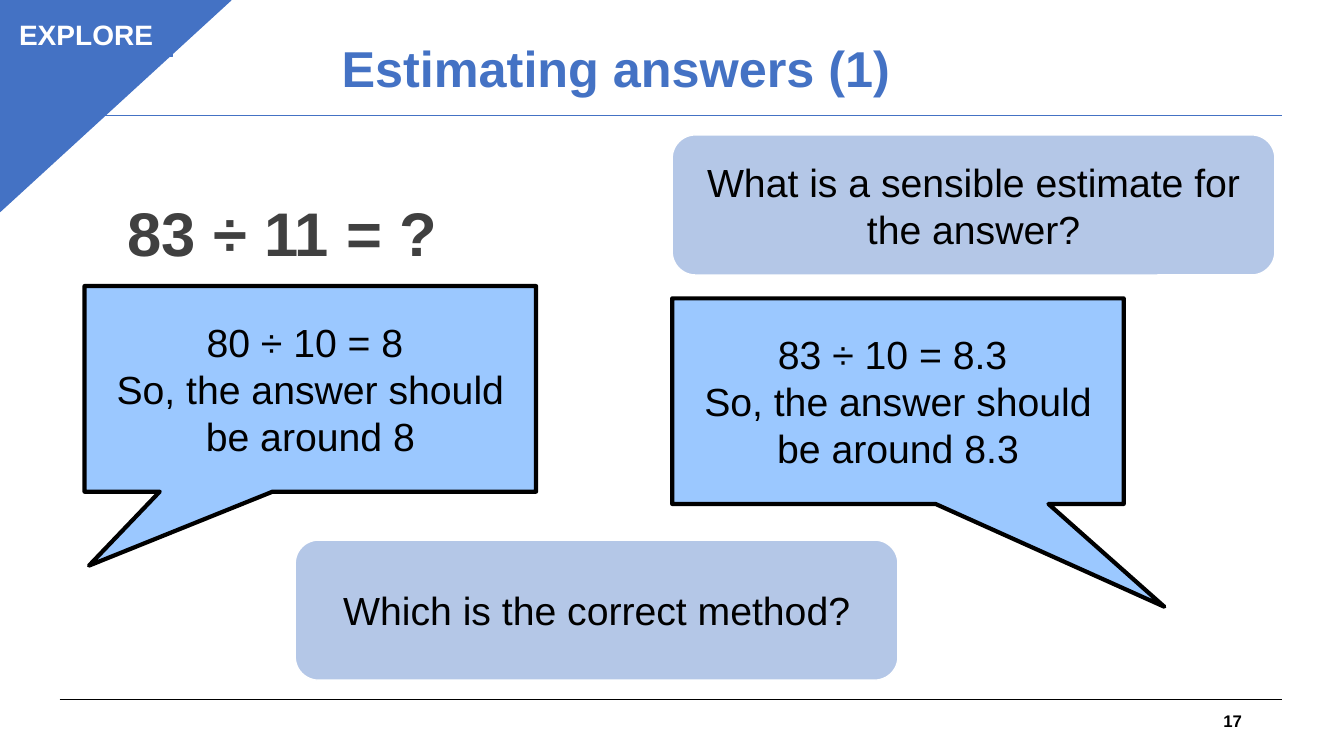
"""Build the slide on estimating the answer to a division."""
from lxml.etree import SubElement
from pptx import Presentation
from pptx.dml.color import RGBColor
from pptx.enum.shapes import MSO_CONNECTOR, MSO_SHAPE
from pptx.enum.text import MSO_ANCHOR, PP_ALIGN
from pptx.oxml.ns import qn
from pptx.util import Cm, Pt

TITLE = "Estimating answers (1)"
SUM = "83 ÷ 11 = ?"
TAG = "EXPLORE"
PAGE = "17"
CARDS = [
    ("What is a sensible estimate for the answer?", 16.94, 3.4),
    ("Which is the correct method?", 7.44, 13.61),
]
CALLS = [
    (["80 ÷ 10 = 8 ", "So, the answer should be around 8"], 2.13, 7.21, (-0.49, 0.86)),
    (["83 ÷ 10 = 8.3 ", "So, the answer should be around 8.3"], 16.94, 7.52, (0.59, 1)),
]
RULES = [(2.9, "blue"), (17.63, "black")]
LEFT, RIGHT = 1.5, 32.31
CARD = (15.19, 3.53)
CALL = (11.38, 5.18)
FLAG = (5.82, 5.33)

THEME = {
    "font": "Arial",
    "color": {"blue": "4472C4", "pale": "B4C7E7", "sky": "9BC8FF",
              "black": "000000", "white": "FFFFFF", "gray": "404040"},
    "size": {"page": 12, "tag": 20, "body": 28, "title": 36, "sum": 44},
}


def tone(name):
    """Return a theme colour."""
    return RGBColor.from_string(THEME["color"][name])


def write(shape, lines, size="body", color="black", bold=False, align=PP_ALIGN.CENTER):
    """Fill a shape with formatted paragraphs."""
    frame = shape.text_frame
    frame.word_wrap = True
    frame.vertical_anchor = MSO_ANCHOR.MIDDLE
    frame.text = "\n".join(lines)
    for para in frame.paragraphs:
        para.alignment = align
        font = para.runs[0].font
        font.name = THEME["font"]
        font.size = Pt(THEME["size"][size])
        font.bold = bold
        font.color.rgb = tone(color)


def paint(shape, fill, line, width):
    """Set fill and outline, without a shadow."""
    shape.shadow.inherit = False
    shape.fill.solid()
    shape.fill.fore_color.rgb = tone(fill)
    shape.line.color.rgb = tone(line)
    shape.line.width = Pt(width)
    return shape


def block(slide, kind, box, fill, line, width):
    """Add a painted preset shape."""
    return paint(slide.shapes.add_shape(kind, *map(Cm, box)), fill, line, width)


def label(slide, box, text, **style):
    """Add a text box."""
    write(slide.shapes.add_textbox(*map(Cm, box)), [text], **style)


def rule(slide, top, color):
    """Add a line across the slide."""
    line = slide.shapes.add_connector(
        MSO_CONNECTOR.STRAIGHT, Cm(LEFT), Cm(top), Cm(RIGHT), Cm(top))
    line.line.color.rgb = tone(color)
    line.line.width = Pt(0.75)
    SubElement(line._element.spPr, qn("a:effectLst"))


def main():
    """Build and save the slide."""
    deck = Presentation()
    deck.slide_width, deck.slide_height = Cm(33.87), Cm(19.05)
    slide = deck.slides.add_slide(deck.slide_layouts[6])

    for top, color in RULES:
        rule(slide, top, color)
    label(slide, (23.93, 17.65, 7.62, 1.02), PAGE, size="page", bold=True,
          align=PP_ALIGN.RIGHT)
    label(slide, (7.32, 0.3, 16.41, 2.82), TITLE, size="title", color="blue", bold=True)
    label(slide, (2.97, 4.83, 13, 2.03), SUM, size="sum", color="gray", bold=True,
          align=PP_ALIGN.LEFT)

    for text, left, top in CARDS:
        card = block(slide, MSO_SHAPE.ROUNDED_RECTANGLE, (left, top, *CARD),
                     "pale", "white", 1)
        write(card, [text])
    for lines, left, top, tip in CALLS:
        call = block(slide, MSO_SHAPE.RECTANGULAR_CALLOUT, (left, top, *CALL),
                     "sky", "black", 3)
        call.adjustments[0], call.adjustments[1] = tip
        write(call, lines)

    wide, high = map(Cm, FLAG)
    form = slide.shapes.build_freeform(0, 0)
    form.add_line_segments([(wide, 0), (0, high)], close=True)
    paint(form.convert_to_shape(), "blue", "blue", 1)
    tag = block(slide, MSO_SHAPE.RECTANGLE, (0, 0.3, 4.34, 1.12), "blue", "blue", 0.75)
    write(tag, [TAG], size="tag", color="white", bold=True)

    deck.save("out.pptx")


if __name__ == "__main__":
    main()
